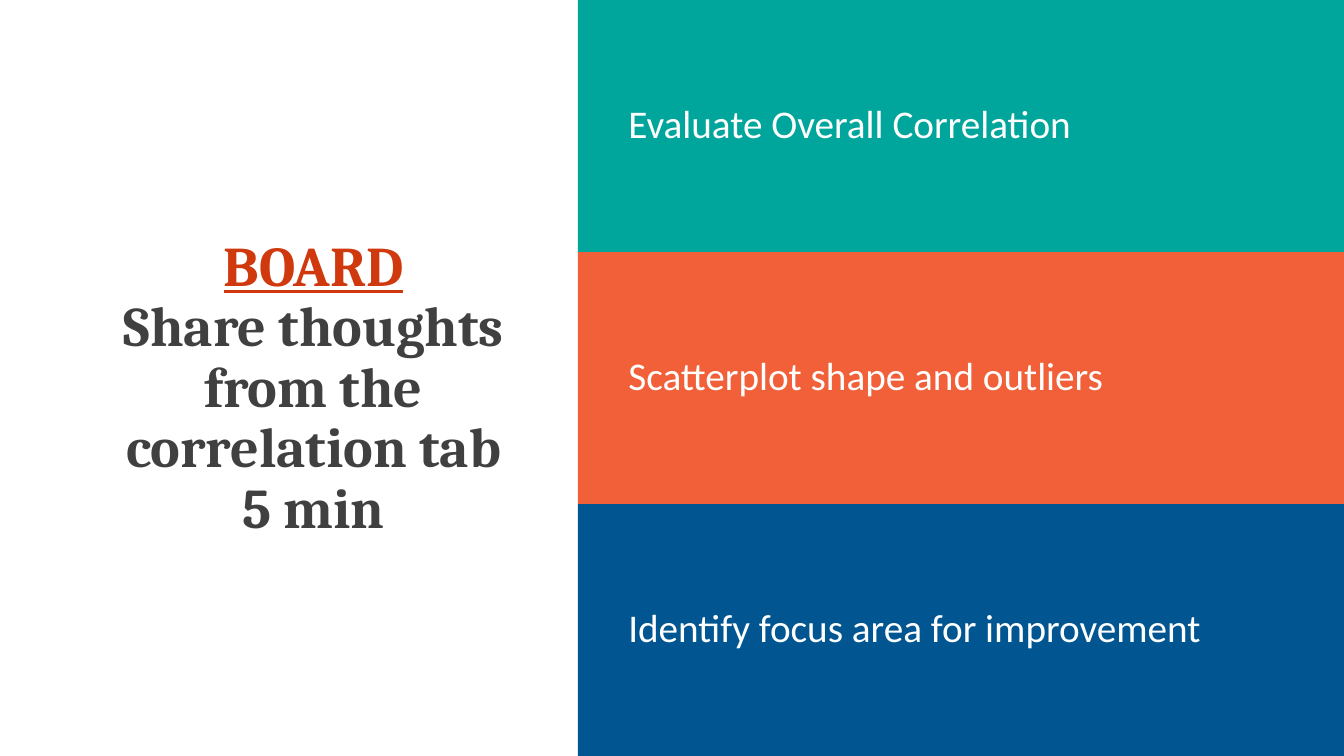
import pptx
import pptx.util
import pptx.dml.color
import pptx.enum.text
import pptx.oxml.ns
from lxml import etree

HEADING = ["BOARD", "Share thoughts from the correlation tab", "5 min"]
TOPICS = [
    ("Evaluate Overall Correlation", "teal"),
    ("Scatterplot shape and outliers", "orange"),
    ("Identify focus area for improvement", "blue"),
]
THEME = {
    "teal": "00A69B", "orange": "F16038", "blue": "015692",
    "accent": "D0380E", "dark": "404040", "white": "FFFFFF",
    "heading_font": "Cambria", "heading_size": 40,
    "topic_font": "Calibri", "topic_size": 28,
}
WIDTH, HEIGHT = 13.33, 7.5
PANEL_LEFT = 0.43 * WIDTH
ROW = HEIGHT / len(TOPICS)
TITLE_BOX = (0.92, 1.03, 4.38, 5.66)


def color(name):
    return pptx.dml.color.RGBColor.from_string(THEME[name])


def place(sp, left, top, width, height):
    sp.left, sp.top, sp.width, sp.height = map(
        pptx.util.Inches, (left, top, width, height))
    tf = sp.text_frame
    tf.word_wrap = True
    tf.auto_size = pptx.enum.text.MSO_AUTO_SIZE.NONE
    tf.vertical_anchor = pptx.enum.text.MSO_ANCHOR.MIDDLE
    return tf


def style(r, role, tint, bold):
    r.font.name = THEME[role + "_font"]
    r.font.size = pptx.util.Pt(THEME[role + "_size"])
    r.font.color.rgb = color(tint)
    r.font.bold = bold


def add_heading(sp):
    p = place(sp, *TITLE_BOX).paragraphs[0]
    p.text = "\v".join(HEADING)
    p.alignment = pptx.enum.text.PP_ALIGN.CENTER
    p.line_spacing = 0.9
    for i, r in enumerate(p.runs):
        style(r, "heading", "dark" if i else "accent", True)
        r.font.underline = i == 0
    for br in p._p.findall(pptx.oxml.ns.qn("a:br")):
        etree.SubElement(br, pptx.oxml.ns.qn("a:rPr"),
                         sz=str(THEME["heading_size"] * 100))


def add_topic(sp, row, text, fill):
    tf = place(sp, PANEL_LEFT, row * ROW, WIDTH - PANEL_LEFT, ROW)
    tf.margin_left = tf.margin_right = pptx.util.Inches(0.5)
    sp.fill.solid()
    sp.fill.fore_color.rgb = color(fill)
    p = tf.paragraphs[0]
    p.text = text
    pPr = p._p.get_or_add_pPr()
    pPr.set("marL", "0")
    pPr.set("indent", "0")
    etree.SubElement(pPr, pptx.oxml.ns.qn("a:buNone"))
    p.alignment = pptx.enum.text.PP_ALIGN.LEFT
    p.line_spacing = 0.9
    p.space_before = pptx.util.Pt(0)
    style(p.runs[0], "topic", "white", False)


def main():
    prs = pptx.Presentation()
    prs.slide_width = pptx.util.Inches(WIDTH)
    prs.slide_height = pptx.util.Inches(HEIGHT)
    s = prs.slides.add_slide(prs.slide_layouts.get_by_name("Comparison"))
    title, *bodies = list(s.placeholders)
    add_heading(title)
    for row, (sp, (text, fill)) in enumerate(zip(bodies, TOPICS)):
        add_topic(sp, row, text, fill)
    for sp in bodies[len(TOPICS):]:
        sp.element.getparent().remove(sp.element)
    prs.save("out.pptx")


if __name__ == "__main__":
    main()
